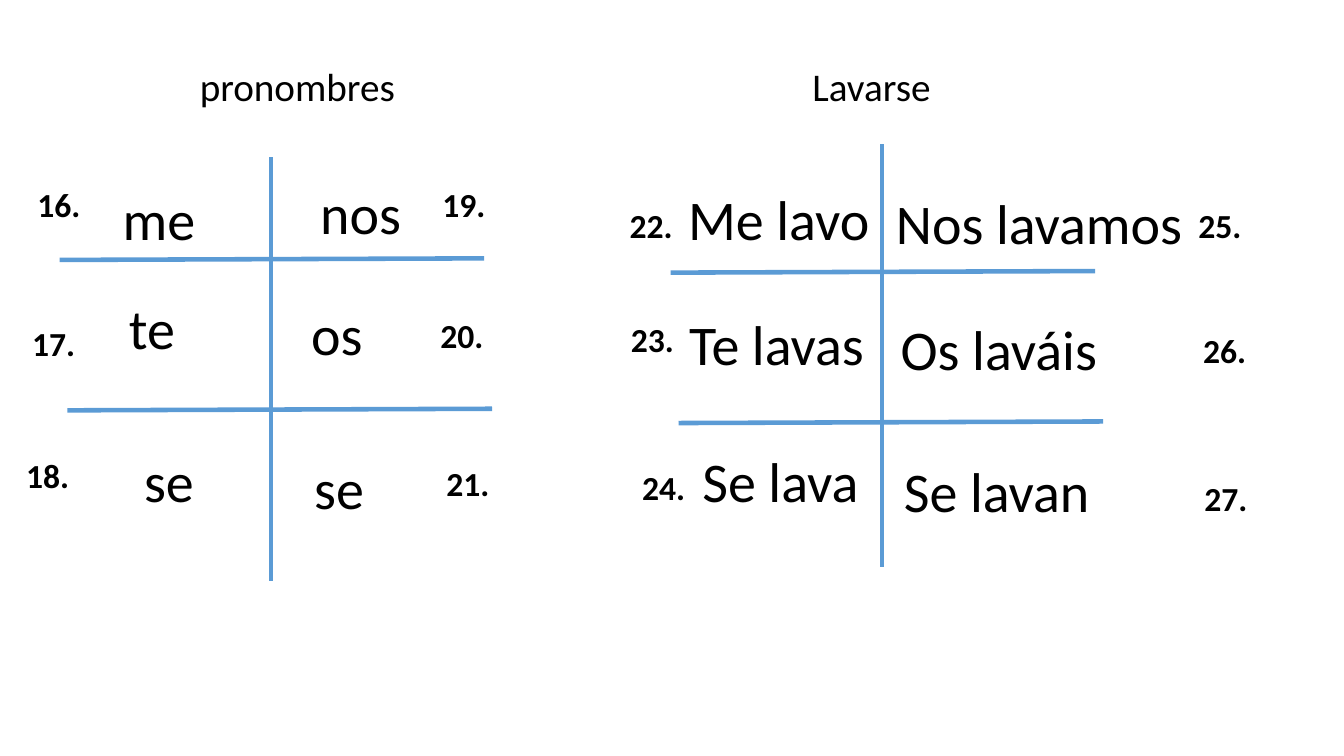
from lxml import etree
from pptx import Presentation
from pptx.dml.color import RGBColor
from pptx.enum.shapes import MSO_CONNECTOR
from pptx.enum.text import MSO_ANCHOR, MSO_AUTO_SIZE, PP_ALIGN
from pptx.oxml.ns import qn
from pptx.util import Cm, Pt

STRAIGHT = MSO_CONNECTOR.STRAIGHT
TOP = MSO_ANCHOR.TOP
LEFT = PP_ALIGN.LEFT
GROW = MSO_AUTO_SIZE.SHAPE_TO_FIT_TEXT
COLORS = {"rule": "5B9BD5", "text": "000000"}
FONT = "Calibri"
COMPARISON_LAYOUT = 4

ROW_LENGTH, ROW_RISE = 10.7, 0.04
ROW_SHIFT, ROW_STEP = 0.2, 3.79
COLUMN_LENGTH = 10.67

CHARTS = [
    {
        "heading": ("pronombres", 4.78, 7.44),
        "column": (6.83, 3.96),
        "row": (1.5, 6.55),
        "first_number": 16,
        "numbers": [(0.69, 4.52), (0.56, 8.0), (0.41, 11.33),
                    (10.9, 4.52), (10.85, 7.8), (11.0, 11.53)],
        "forms": [("me", 2.84, 4.52, 3.4), ("te", 3.0, 7.26, 3.4),
                  ("se", 3.38, 11.13, 3.4), ("nos", 7.82, 4.37, 3.4),
                  ("os", 7.59, 7.42, 3.4), ("se", 7.67, 11.3, 3.4)],
    },
    {
        "heading": ("Lavarse", 20.22, 5.03),
        "column": (22.23, 3.63),
        "row": (16.9, 6.87),
        "first_number": 22,
        "numbers": [(15.62, 5.05), (15.65, 7.92), (15.93, 11.63),
                    (29.95, 5.05), (30.07, 8.2), (30.1, 11.91)],
        "forms": [("Me lavo", 17.09, 4.52, 6.22), ("Te lavas", 17.12, 7.67, 5.59),
                  ("Se lava", 17.45, 11.13, 5.11), ("Nos lavamos", 22.33, 4.62, 8.0),
                  ("Os laváis", 22.45, 7.8, 7.06), ("Se lavan", 22.53, 11.38, 5.54)],
    },
]


class ConjugationSlide:
    def __init__(self, slide):
        self.slide = slide

    def fill_text(self, frame, wording, size, bold=False):
        frame.word_wrap = True
        frame.auto_size = GROW
        frame.vertical_anchor = TOP
        paragraph = frame.paragraphs[0]
        paragraph.alignment = LEFT
        paragraph.space_before = Pt(0)
        run = paragraph.add_run()
        run.text = wording
        run.font.name = FONT
        run.font.size = Pt(size)
        run.font.bold = bold
        run.font.color.rgb = RGBColor.from_string(COLORS["text"])

    def heading(self, placeholder, wording, left, width):
        placeholder.left, placeholder.top = Cm(left), Cm(1.45)
        placeholder.width, placeholder.height = Cm(width), Cm(1.45)
        self.fill_text(placeholder.text_frame, wording, 28)

    def label(self, wording, left, top, width, height, size, bold=False):
        box = self.slide.shapes.add_textbox(Cm(left), Cm(top), Cm(width), Cm(height))
        self.fill_text(box.text_frame, wording, size, bold)

    def rule(self, x1, y1, x2, y2, weight):
        line = self.slide.shapes.add_connector(STRAIGHT, Cm(x1), Cm(y1), Cm(x2), Cm(y2))
        line.line.color.rgb = RGBColor.from_string(COLORS["rule"])
        line.line.width = Pt(weight)
        etree.SubElement(line._element.spPr, qn("a:effectLst"))

    def chart(self, placeholder, content):
        x, y = content["column"]
        self.rule(x, y, x, y + COLUMN_LENGTH, 3)
        left, top = content["row"]
        for row in range(2):
            x, y = left + row * ROW_SHIFT, top + row * ROW_STEP
            self.rule(x, y, x + ROW_LENGTH, y - ROW_RISE, 3.25)
        self.heading(placeholder, *content["heading"])
        for number, (x, y) in enumerate(content["numbers"], content["first_number"]):
            self.label(f"{number}.", x, y, 2.41, 1.27, 24, bold=True)
        for form, x, y, width in content["forms"]:
            self.label(form, x, y, width, 1.96, 40)

    def remove_empty_placeholders(self):
        for placeholder in list(self.slide.placeholders):
            if not placeholder.text_frame.text:
                placeholder._element.getparent().remove(placeholder._element)


def main():
    presentation = Presentation()
    presentation.slide_width, presentation.slide_height = Cm(33.87), Cm(19.05)
    slide = presentation.slides.add_slide(presentation.slide_layouts[COMPARISON_LAYOUT])
    lesson = ConjugationSlide(slide)
    headings = [slide.placeholders[1], slide.placeholders[3]]
    for placeholder, content in zip(headings, CHARTS):
        lesson.chart(placeholder, content)
    lesson.remove_empty_placeholders()
    presentation.save("out.pptx")


if __name__ == "__main__":
    main()
